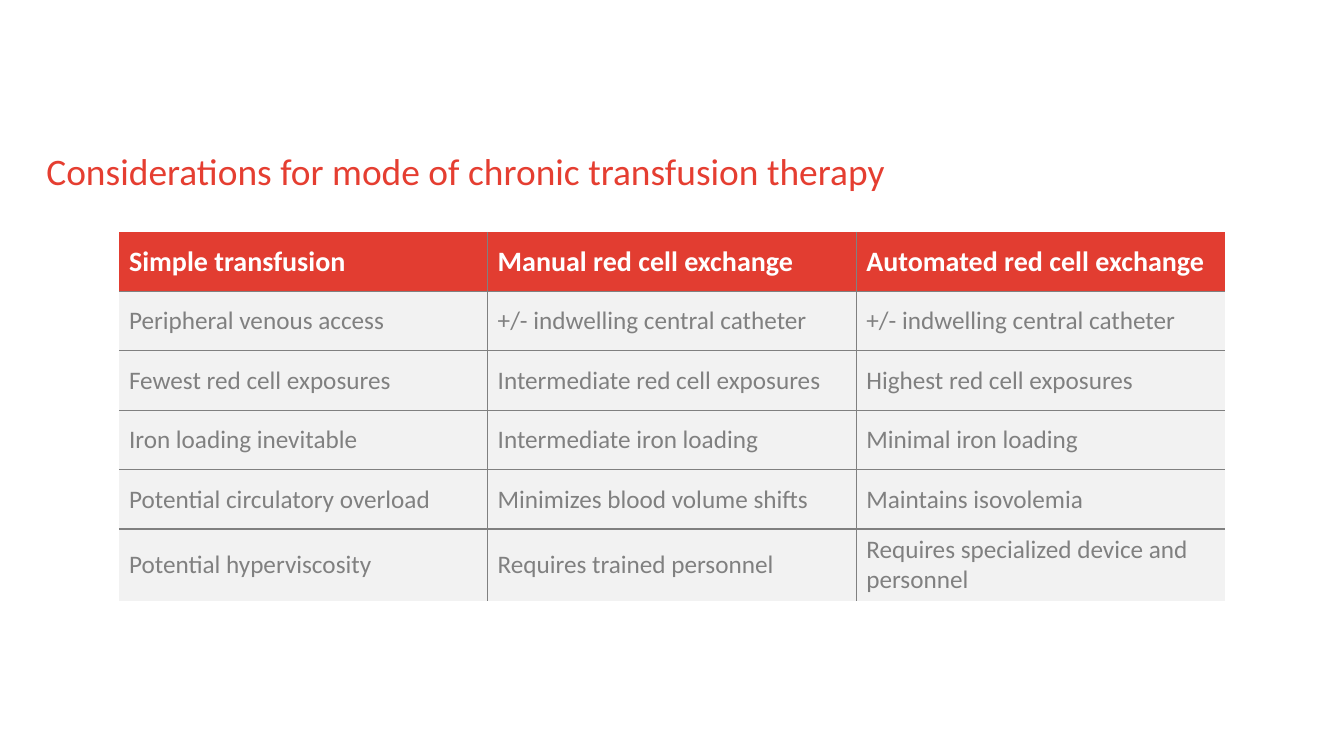
from lxml.etree import SubElement
from pptx import Presentation
from pptx.dml.color import RGBColor
from pptx.enum.text import MSO_ANCHOR
from pptx.oxml.ns import qn
from pptx.util import Inches, Pt

COLORS = {"title": "E53E31", "header": "E23D31", "body": "F2F2F2",
          "grey": "808080", "white": "FFFFFF"}
TITLE = {"size": Pt(26.7), "name": "Calibri", "bold": False}
HEADER = {"size": Pt(20), "name": "Calibri", "bold": True}
BODY = {"size": Pt(18), "name": "Calibri", "bold": False}

CONSIDERATIONS = [
    ("Simple transfusion", "Manual red cell exchange", "Automated red cell exchange"),
    ("Peripheral venous access", "+/- indwelling central catheter",
     "+/- indwelling central catheter"),
    ("Fewest red cell exposures", "Intermediate red cell exposures",
     "Highest red cell exposures"),
    ("Iron loading inevitable", "Intermediate iron loading", "Minimal iron loading"),
    ("Potential circulatory overload", "Minimizes blood volume shifts",
     "Maintains isovolemia"),
    ("Potential hyperviscosity", "Requires trained personnel",
     "Requires specialized device and personnel"),
]


def write(frame, text, font_format, color):
    para = frame.paragraphs[0]
    span = para.add_run()
    span.text = text
    for name, value in font_format.items():
        setattr(span.font, name, value)
    span.font.color.rgb = RGBColor.from_string(COLORS[color])


def add_title(page, left, top, width, height, text):
    box = page.shapes.add_textbox(Inches(left), Inches(top), Inches(width), Inches(height))
    frame = box.text_frame
    frame_format = {"word_wrap": True, "vertical_anchor": MSO_ANCHOR.TOP,
                    "margin_left": 0, "margin_top": 0}
    for name, value in frame_format.items():
        setattr(frame, name, value)
    write(frame, text, TITLE, "title")


def set_borders(cell, visible):
    properties = cell._tc.get_or_add_tcPr()
    for side in "LRTB":
        line = SubElement(properties, qn(f"a:ln{side}"), w=str(Pt(1)))
        if side in visible:
            fill = SubElement(line, qn("a:solidFill"))
            SubElement(fill, qn("a:srgbClr"), val=COLORS["grey"])
        else:
            SubElement(line, qn("a:noFill"))


def add_comparison(page, left, top, width, height, rows):
    last_row, last_column = len(rows) - 1, len(rows[0]) - 1
    row_height = 0.59
    table = page.shapes.add_table(len(rows), len(rows[0]), Inches(left), Inches(top),
                                  Inches(width), Inches(height)).table
    table.horz_banding = False
    for row in table.rows:
        row.height = Inches(row_height)
    table.rows[last_row].height = Inches(height - row_height * last_row)

    for i, texts in enumerate(rows):
        for j, text in enumerate(texts):
            cell = table.cell(i, j)
            inner = {"L": j > 0, "R": j < last_column, "T": i > 0, "B": i < last_row}
            set_borders(cell, [side for side, shown in inner.items() if shown])
            cell.fill.solid()
            cell.fill.fore_color.rgb = RGBColor.from_string(
                COLORS["body" if i else "header"])
            cell.vertical_anchor = MSO_ANCHOR.MIDDLE
            write(cell.text_frame, text, BODY if i else HEADER, "grey" if i else "white")


def main():
    deck = Presentation()
    deck.slide_width, deck.slide_height = Inches(13.33), Inches(7.5)
    page = deck.slides.add_slide(deck.slide_layouts[6])
    add_comparison(page, 1.18, 2.3, 10.97, 3.65, CONSIDERATIONS)
    add_title(page, 0.46, 1.47, 12, 0.78,
              "Considerations for mode of chronic transfusion therapy")
    deck.save("out.pptx")


if __name__ == "__main__":
    main()
